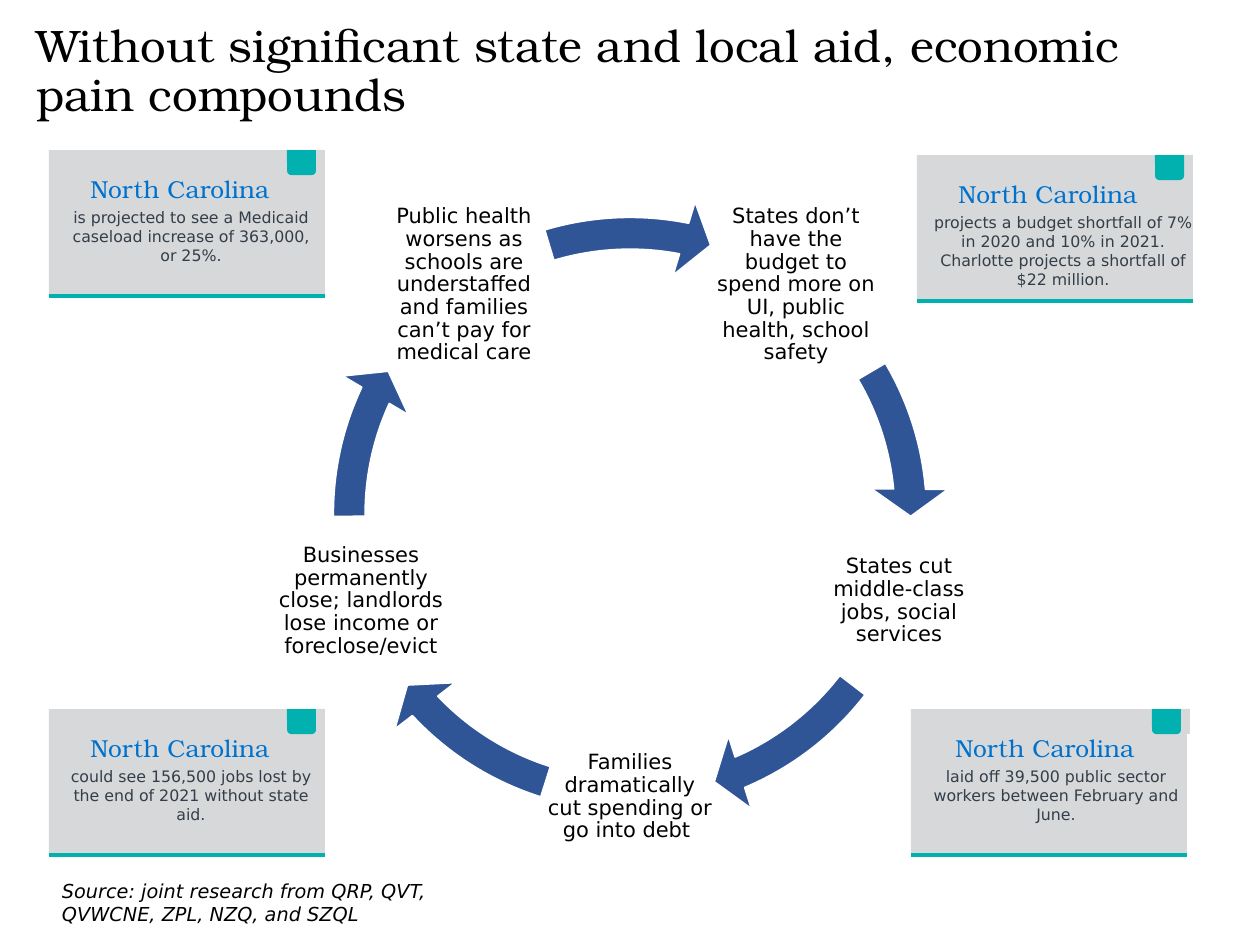
from lxml.etree import SubElement
from pptx import Presentation
from pptx.dml.color import RGBColor
from pptx.enum.shapes import MSO_CONNECTOR, MSO_SHAPE
from pptx.enum.text import MSO_ANCHOR, MSO_AUTO_SIZE, PP_ALIGN
from pptx.oxml.ns import qn
from pptx.util import Emu, Pt

BLACK = RGBColor(0x00, 0x00, 0x00)
WHITE = RGBColor(0xFF, 0xFF, 0xFF)
ARROW_BLUE = RGBColor(0x2F, 0x55, 0x97)
HEADING_BLUE = RGBColor(0x00, 0x72, 0xCE)
SLATE = RGBColor(0x33, 0x3E, 0x48)
CARD_GRAY = RGBColor(0xD6, 0xD8, 0xDA)
TEAL = RGBColor(0x00, 0xB1, 0xB0)
SANS = "DejaVu Sans"
SERIF = "TeX Gyre Bonum"


def px(*lengths):
    return [Emu(round(length * 914400 / 126)) for length in lengths]


def write_text(shape, text, size, font=SANS, color=BLACK, align=PP_ALIGN.CENTER,
               anchor=MSO_ANCHOR.TOP, inset=(0, 0), spacing=1.0, italic=False):
    frame = shape.text_frame
    frame.word_wrap = True
    frame.auto_size = MSO_AUTO_SIZE.NONE
    frame.vertical_anchor = anchor
    frame.margin_left, frame.margin_top = px(*inset)
    frame.margin_right, frame.margin_bottom = px(*inset)
    paragraph = frame.paragraphs[0]
    paragraph.alignment = align
    paragraph.line_spacing = spacing
    run = paragraph.add_run()
    run.text = text
    run.font.name = font
    run.font.size = Pt(size)
    run.font.italic = italic
    run.font.color.rgb = color


presentation = Presentation()
presentation.slide_width, presentation.slide_height = px(1260, 945)
slide = presentation.slides.add_slide(presentation.slide_layouts[5])
shapes = slide.shapes

title = shapes.title
title.left, title.top, title.width, title.height = px(23, 23, 1201, 98)
write_text(title, "Without significant state and local aid, economic pain compounds", 26,
           font=SERIF, align=PP_ALIGN.LEFT, anchor=MSO_ANCHOR.MIDDLE, inset=(13, 6), spacing=0.9)

cycle_steps = [
    (711, 200, "States don’t have the budget to spend more on UI, public health, school safety",
     212.94, 197.66),
    (814, 516, "States cut middle-class jobs, social services", 40.16, 22.53),
    (545, 712, "Families dramatically cut spending or go into debt ", 82.12, 64.49),
    (276, 516, "Businesses permanently close; landlords lose income or foreclose/evict",
     122.99, 107.7),
    (379, 200, "Public health worsens as schools are understaffed and families can’t pay for "
     "medical care", 168.67, 151.98),
]
for left, top, text, end_angle, start_angle in cycle_steps:
    step = shapes.add_textbox(*px(left, top, 170, 170))
    write_text(step, text, 12, anchor=MSO_ANCHOR.MIDDLE, inset=(2, 2), spacing=0.9)
    arrow = shapes.add_shape(MSO_SHAPE.CIRCULAR_ARROW, *px(311, 195, 638, 638))
    arrow.shadow.inherit = False
    arrow.fill.solid()
    arrow.fill.fore_color.rgb = ARROW_BLUE
    arrow.line.color.rgb = WHITE
    arrow.line.width = Pt(1)
    for index, value in enumerate((0.05, 3.36, end_angle, start_angle, 0.06)):
        arrow.adjustments[index] = value

cards = [
    (917, 155, 0, 260, "projects a budget shortfall of 7% in 2020 and 10% in 2021. "
     "Charlotte projects a shortfall of $22 million."),
    (911, 709, 3, 252, "laid off 39,500 public sector workers between February and June."),
    (49, 150, 0, 252, "is projected to see a Medicaid caseload increase of 363,000, or 25%."),
    (49, 709, 0, 252, "could see 156,500 jobs lost by the end of 2021 without state aid."),
]
for left, top, shift, body_width, body_text in cards:
    content_left = left + shift
    tab_left = content_left + 238
    panels = [
        (MSO_SHAPE.RECTANGLE, (left, top, 276, 146), CARD_GRAY, 0),
        (MSO_SHAPE.RECTANGLE, (tab_left, top, 38, 25), CARD_GRAY, 0),
        (MSO_SHAPE.ROUND_2_SAME_RECTANGLE, (tab_left, top, 29, 25), TEAL, 180),
    ]
    for kind, box, color, rotation in panels:
        panel = shapes.add_shape(kind, *px(*box))
        panel.shadow.inherit = False
        panel.rotation = rotation
        panel.fill.solid()
        panel.fill.fore_color.rgb = color
        panel.line.fill.background()

    underline = shapes.add_connector(
        MSO_CONNECTOR.STRAIGHT, *px(left, top + 146, left + 276, top + 146))
    underline.line.color.rgb = TEAL
    underline.line.width = Pt(2.25)
    SubElement(underline._element.spPr, qn("a:effectLst"))

    heading = shapes.add_textbox(*px(content_left, top, 262, 53))
    write_text(heading, "North Carolina", 14, font=SERIF, color=HEADING_BLUE,
               anchor=MSO_ANCHOR.BOTTOM)
    body = shapes.add_textbox(*px(content_left + 16, top + 58, body_width, 77))
    write_text(body, body_text, 9, color=SLATE)

source = shapes.add_textbox(*px(49, 873, 454, 59))
write_text(source, "Source: joint research from QRP, QVT, QVWCNE, ZPL, NZQ, and SZQL", 11,
           align=PP_ALIGN.LEFT, inset=(13, 6), italic=True)

presentation.save("out.pptx")
